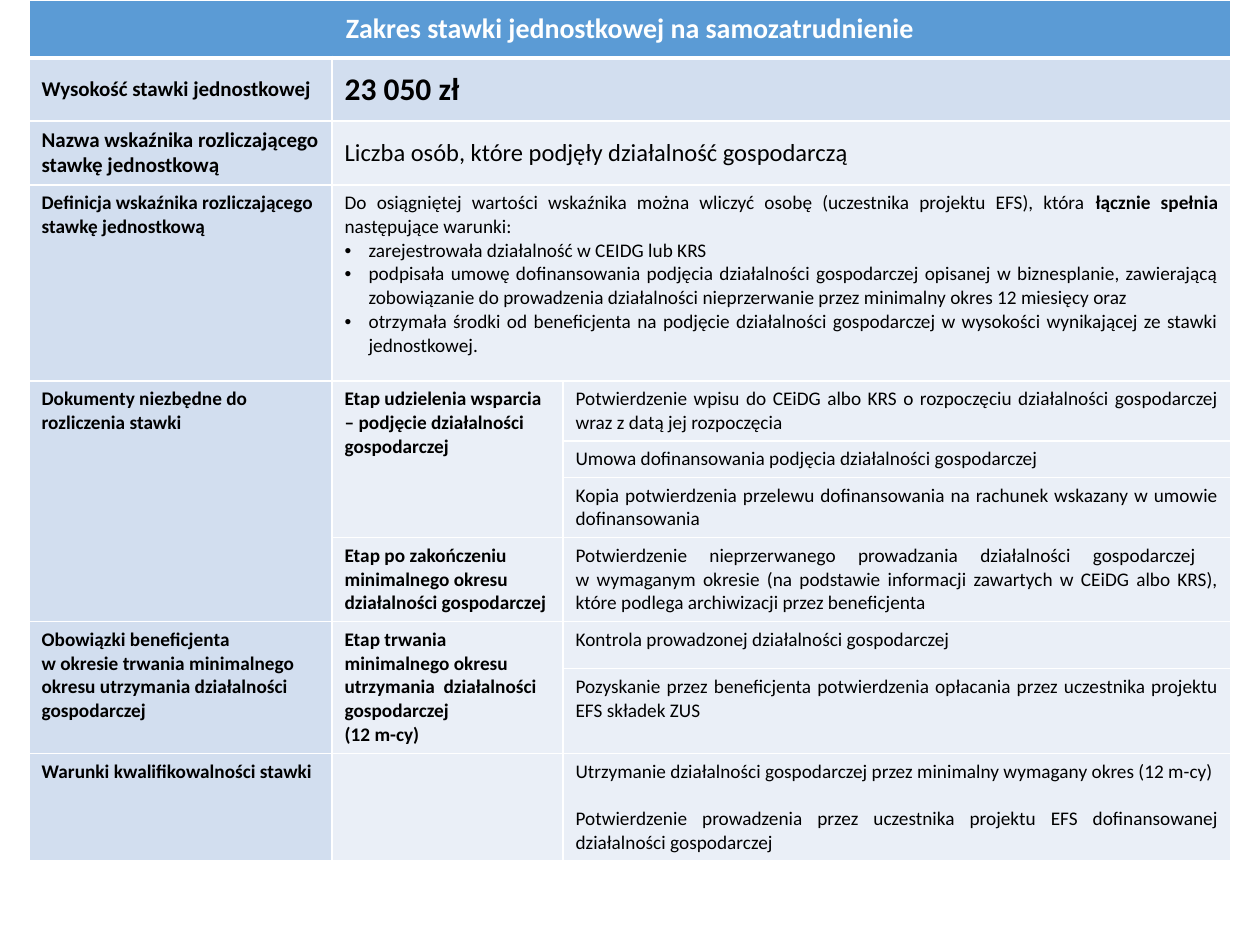
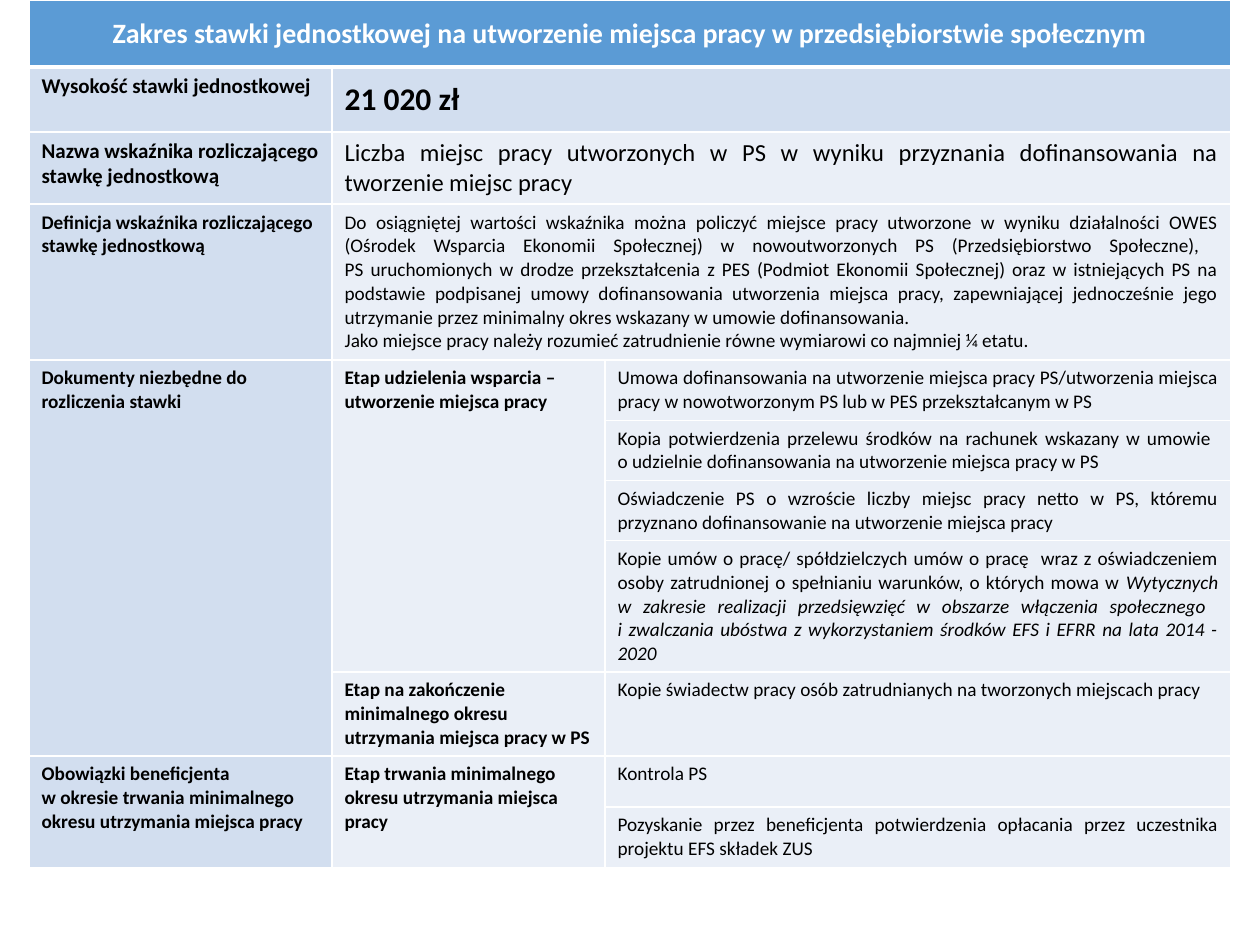
from copy import deepcopy

from lxml.etree import SubElement
from pptx import Presentation
from pptx.dml.color import RGBColor
from pptx.enum.text import MSO_ANCHOR, PP_ALIGN
from pptx.oxml.ns import qn
from pptx.util import Emu, Pt

PX = 914400 / 126
FONT = "Calibri"
COLORS = {
    "header": "5B9BD5",
    "label": "D2DEEF",
    "body": "EAEFF7",
    "border": "FFFFFF",
    "title": "FFFFFF",
    "text": "000000",
}
TABLE_LEFT = 29
LABEL_WIDTH = 303
BULLET_INDENT = 24
BLANK_LINE = 13.4
SIDES = ("lnL", "lnR", "lnT", "lnB")

INDICATOR_LABEL = "Nazwa wskaźnika rozliczającego stawkę jednostkową"
DEFINITION_LABEL = "Definicja wskaźnika rozliczającego stawkę jednostkową"
DOCUMENTS_LABEL = "Dokumenty niezbędne do rozliczenia stawki"
CONTRIBUTIONS = (
    "Pozyskanie przez beneficjenta potwierdzenia opłacania przez uczestnika "
    "projektu EFS składek ZUS"
)


def px(length):
    return Emu(round(length * PX))


def write(paragraph, text, size=11, bold=False, italic=False, color="text"):
    for index, line in enumerate(text.split("\n")):
        if index:
            line_break = paragraph._p.add_br()
            line_break.append(deepcopy(run._r.rPr))
        run = paragraph.add_run()
        run.text = line
        font = run.font
        font.name = FONT
        font.size = Pt(size)
        font.bold = bold
        font.italic = italic
        font.color.rgb = RGBColor.from_string(COLORS[color])


def add_bullet(paragraph):
    properties = paragraph._p.get_or_add_pPr()
    properties.set("marL", str(px(BULLET_INDENT)))
    properties.set("indent", str(-px(BULLET_INDENT)))
    SubElement(properties, qn("a:buFont"), typeface="Arial")
    SubElement(properties, qn("a:buChar"), char="•")


def add_borders(cell, row):
    properties = cell._tc.get_or_add_tcPr()
    for side in SIDES:
        below_header = (row, side) in ((0, "lnB"), (1, "lnT"))
        width = Pt(3 if below_header else 1)
        line = SubElement(properties, qn(f"a:{side}"), w=str(width))
        fill = SubElement(line, qn("a:solidFill"))
        SubElement(fill, qn("a:srgbClr"), val=COLORS["border"])


class RateSheet:
    def __init__(self, presentation, stage_width, evidence_width, heights):
        self.slide = presentation.slides.add_slide(presentation.slide_layouts[6])
        widths = (LABEL_WIDTH, stage_width, evidence_width)
        frame = self.slide.shapes.add_table(
            len(heights), len(widths), px(TABLE_LEFT), 0, px(sum(widths)), px(sum(heights))
        )
        self.table = frame.table
        self.table.first_row = False
        self.table.horz_banding = False
        for column, width in zip(self.table.columns, widths):
            column.width = px(width)
        for index, (row, height) in enumerate(zip(self.table.rows, heights)):
            row.height = px(height)
            for column in range(len(widths)):
                cell = self.table.cell(index, column)
                add_borders(cell, index)
                self.fill(cell, "body" if column else "label")

    def fill(self, cell, color):
        cell.fill.solid()
        cell.fill.fore_color.rgb = RGBColor.from_string(COLORS[color])

    def cell(self, row, column, *texts, rows=1, columns=1, fill=None,
             anchor=MSO_ANCHOR.TOP, align=PP_ALIGN.LEFT, bullets=(), gap=0, **style):
        cell = self.table.cell(row, column)
        if rows > 1 or columns > 1:
            cell.merge(self.table.cell(row + rows - 1, column + columns - 1))
        if fill:
            self.fill(cell, fill)
        cell.vertical_anchor = anchor
        frame = cell.text_frame
        for index, text in enumerate(texts):
            paragraph = frame.add_paragraph() if index else frame.paragraphs[0]
            paragraph.alignment = align
            if index and gap:
                paragraph.space_before = Pt(gap)
            if index in bullets:
                add_bullet(paragraph)
            runs = [(text, {})] if isinstance(text, str) else text
            for content, run_style in runs:
                write(paragraph, content, **{**style, **run_style})

    def label(self, row, text, rows=1, **style):
        self.cell(row, 0, text, rows=rows, bold=True, **style)

    def stage(self, row, *texts, rows=1):
        self.cell(row, 1, *texts, rows=rows, bold=True)

    def evidence(self, first_row, *texts):
        for row, text in enumerate(texts, first_row):
            self.cell(row, 2, text, align=PP_ALIGN.JUSTIFY)

    def value(self, row, *texts, **style):
        self.cell(row, 1, *texts, columns=2, **style)

    def summary(self, title, amount, amount_label_anchor, indicator, indicator_align):
        middle = MSO_ANCHOR.MIDDLE
        self.cell(0, 0, title, columns=3, fill="header", anchor=middle,
                  align=PP_ALIGN.CENTER, size=16, bold=True, color="title")
        self.label(1, "Wysokość stawki jednostkowej", size=12, anchor=amount_label_anchor)
        self.value(1, amount, fill="label", anchor=middle, size=18, bold=True)
        self.label(2, INDICATOR_LABEL, size=12)
        self.value(2, indicator, anchor=middle, align=indicator_align, size=14)
        self.label(3, DEFINITION_LABEL)


def add_self_employment(presentation):
    sheet = RateSheet(presentation, 231, 668,
                      (58, 63, 63, 196, 60, 36, 60, 84, 47, 85, 107))
    sheet.summary(
        "Zakres stawki jednostkowej na samozatrudnienie", "23 050 zł", MSO_ANCHOR.MIDDLE,
        "Liczba osób, które podjęły działalność gospodarczą", PP_ALIGN.LEFT,
    )
    sheet.value(
        3,
        [
            ("Do osiągniętej wartości wskaźnika można wliczyć osobę (uczestnika projektu "
             "EFS), która ", {}),
            ("łącznie spełnia ", {"bold": True}),
            ("następujące warunki:", {}),
        ],
        "zarejestrowała działalność w CEIDG lub KRS",
        "podpisała umowę dofinansowania podjęcia działalności gospodarczej opisanej w "
        "biznesplanie, zawierającą zobowiązanie do prowadzenia działalności nieprzerwanie "
        "przez minimalny okres 12 miesięcy oraz",
        "otrzymała środki od beneficjenta na podjęcie działalności gospodarczej w "
        "wysokości wynikającej ze stawki jednostkowej.",
        align=PP_ALIGN.JUSTIFY, bullets=(1, 2, 3),
    )
    sheet.label(4, DOCUMENTS_LABEL, rows=4)
    sheet.stage(4, "Etap udzielenia wsparcia – podjęcie działalności gospodarczej", rows=3)
    sheet.stage(7, "Etap po zakończeniu minimalnego okresu działalności gospodarczej")
    sheet.label(8, "Obowiązki beneficjenta \nw okresie trwania minimalnego okresu "
                   "utrzymania działalności gospodarczej", rows=2)
    sheet.stage(8, "Etap trwania minimalnego okresu utrzymania  działalności gospodarczej",
                "(12 m-cy)", rows=2)
    sheet.evidence(
        4,
        "Potwierdzenie wpisu do CEiDG albo KRS o rozpoczęciu działalności gospodarczej "
        "wraz z datą jej rozpoczęcia",
        "Umowa dofinansowania podjęcia działalności gospodarczej",
        "Kopia potwierdzenia przelewu dofinansowania na rachunek wskazany w umowie "
        "dofinansowania",
        "Potwierdzenie nieprzerwanego prowadzania działalności gospodarczej \n"
        "w wymaganym okresie (na podstawie informacji zawartych w CEiDG albo KRS), "
        "które podlega archiwizacji przez beneficjenta",
        "Kontrola prowadzonej działalności gospodarczej",
        CONTRIBUTIONS,
    )
    sheet.label(10, "Warunki kwalifikowalności stawki")
    sheet.cell(
        10, 2,
        "Utrzymanie działalności gospodarczej przez minimalny wymagany okres (12 m-cy)",
        "Potwierdzenie prowadzenia przez uczestnika projektu EFS dofinansowanej "
        "działalności gospodarczej",
        align=PP_ALIGN.JUSTIFY, gap=BLANK_LINE,
    )


def add_social_enterprise(presentation):
    sheet = RateSheet(presentation, 273, 626,
                      (67, 65, 72, 156, 60, 60, 60, 131, 84, 51, 60))
    sheet.summary(
        "Zakres stawki jednostkowej na utworzenie miejsca pracy w przedsiębiorstwie "
        "społecznym", "21 020 zł", MSO_ANCHOR.TOP,
        "Liczba miejsc pracy utworzonych w PS w wyniku przyznania dofinansowania na "
        "tworzenie miejsc pracy", PP_ALIGN.JUSTIFY,
    )
    sheet.value(
        3,
        "Do osiągniętej wartości wskaźnika można policzyć miejsce pracy utworzone w "
        "wyniku działalności OWES (Ośrodek Wsparcia Ekonomii Społecznej) w "
        "nowoutworzonych PS (Przedsiębiorstwo Społeczne), \n"
        "PS uruchomionych w drodze przekształcenia z PES (Podmiot Ekonomii Społecznej) "
        "oraz w istniejących PS na podstawie podpisanej umowy dofinansowania utworzenia "
        "miejsca pracy, zapewniającej jednocześnie jego utrzymanie przez minimalny okres "
        "wskazany w umowie dofinansowania.",
        "Jako miejsce pracy należy rozumieć zatrudnienie równe wymiarowi co najmniej "
        "¼ etatu.",
        align=PP_ALIGN.JUSTIFY,
    )
    sheet.label(4, DOCUMENTS_LABEL, rows=5)
    sheet.stage(4, "Etap udzielenia wsparcia – utworzenie miejsca pracy", rows=4)
    sheet.stage(8, "Etap na zakończenie minimalnego okresu utrzymania miejsca pracy w PS")
    sheet.label(9, "Obowiązki beneficjenta \nw okresie trwania minimalnego okresu "
                   "utrzymania miejsca pracy", rows=2)
    sheet.stage(9, "Etap trwania minimalnego okresu utrzymania miejsca pracy", rows=2)
    sheet.evidence(
        4,
        "Umowa dofinansowania na utworzenie miejsca pracy PS/utworzenia miejsca pracy w "
        "nowotworzonym PS lub w PES przekształcanym w PS",
        "Kopia potwierdzenia przelewu środków na rachunek wskazany w umowie \n"
        "o udzielnie dofinansowania na utworzenie miejsca pracy w PS",
        "Oświadczenie PS o wzroście liczby miejsc pracy netto w PS, któremu przyznano "
        "dofinansowanie na utworzenie miejsca pracy",
        [
            ("Kopie umów o pracę/ spółdzielczych umów o pracę  wraz z oświadczeniem osoby "
             "zatrudnionej o spełnianiu warunków, o których mowa w ", {}),
            ("Wytycznych w zakresie realizacji przedsięwzięć w obszarze włączenia "
             "społecznego \ni zwalczania ubóstwa z wykorzystaniem środków EFS i EFRR na "
             "lata 2014 - 2020", {"italic": True}),
        ],
        "Kopie świadectw pracy osób zatrudnianych na tworzonych miejscach pracy",
        "Kontrola PS",
        CONTRIBUTIONS,
    )


def main():
    presentation = Presentation()
    presentation.slide_width = px(1260)
    presentation.slide_height = px(945)
    add_self_employment(presentation)
    add_social_enterprise(presentation)
    presentation.save("out.pptx")


if __name__ == "__main__":
    main()
